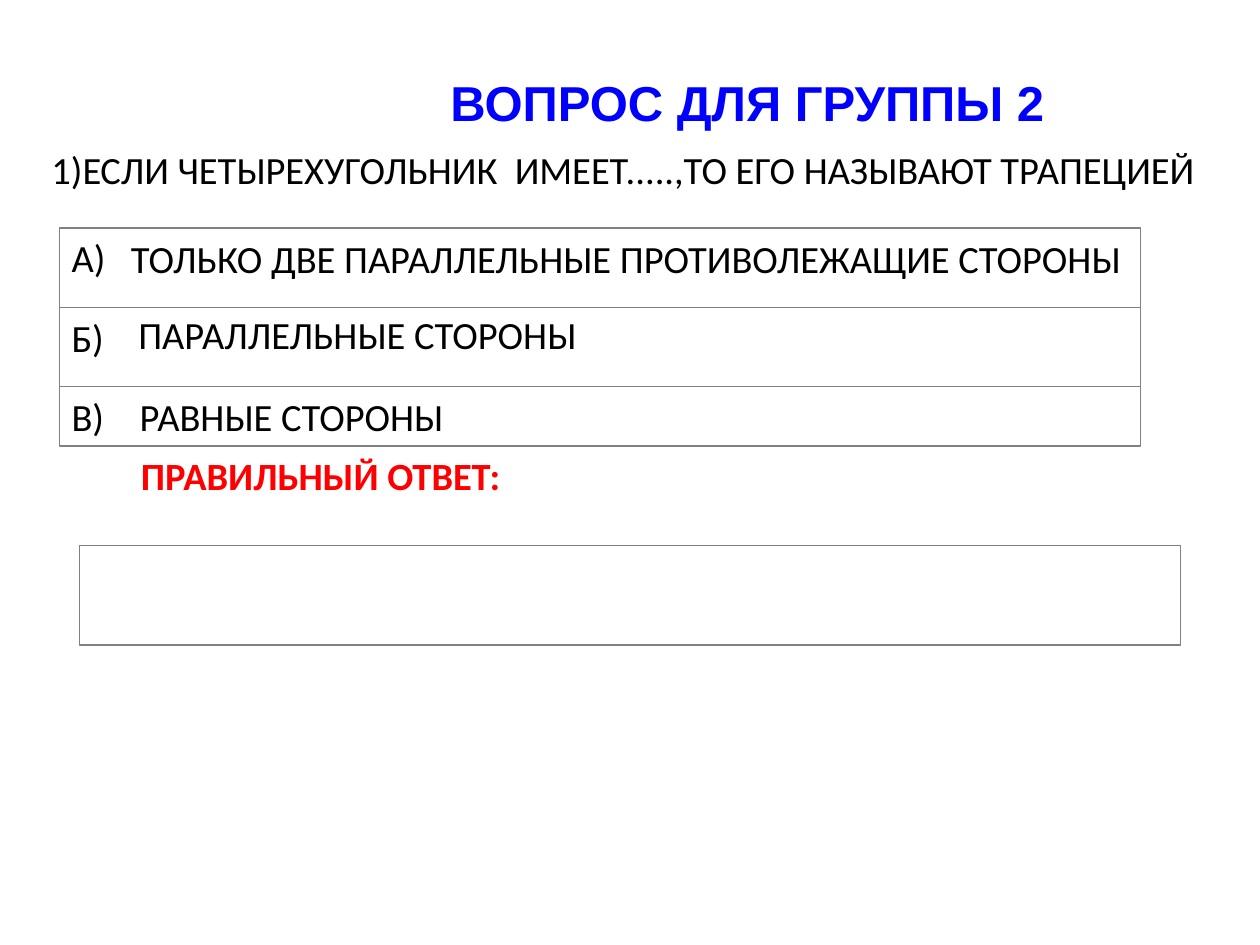
import pptx
import pptx.dml.color
import pptx.enum.shapes
import pptx.enum.text
import pptx.util
from dataclasses import dataclass

COLS, ROWS = 100, 75
LINE_H = 4.7


@dataclass(frozen=True)
class Theme:
    title_font: str = "Arial"
    body_font: str = "Calibri"
    title_size: int = 28
    body_size: int = 22
    title: str = "0000FF"
    text: str = "000000"
    accent: str = "FF0000"
    border: str = "808080"


THEME = Theme()


def rgb(value):
    return pptx.dml.color.RGBColor.from_string(value)


def place(prs, x, y, w, h):
    col, row = prs.slide_width / COLS, prs.slide_height / ROWS
    return [pptx.util.Emu(round(v)) for v in (x * col, y * row, w * col, h * row)]


def style(p, name, size, color, bold):
    p.font.name = name
    p.font.size = pptx.util.Pt(size)
    p.font.bold = bold
    p.font.color.rgb = rgb(color)


def add_title(prs, s, text, x, y, w, h):
    tf = s.shapes.add_textbox(*place(prs, x, y, w, h)).text_frame
    tf.word_wrap = True
    tf.vertical_anchor = pptx.enum.text.MSO_ANCHOR.MIDDLE
    p = tf.paragraphs[0]
    p.text = text
    p.alignment = pptx.enum.text.PP_ALIGN.CENTER
    style(p, THEME.title_font, THEME.title_size, THEME.title, True)


def add_line(prs, s, text, x, y, w, color=THEME.text, bold=False):
    tf = s.shapes.add_textbox(*place(prs, x, y, w, LINE_H)).text_frame
    tf.word_wrap = False
    tf.auto_size = pptx.enum.text.MSO_AUTO_SIZE.SHAPE_TO_FIT_TEXT
    p = tf.paragraphs[0]
    p.text = text
    style(p, THEME.body_font, THEME.body_size, color, bold)


def add_frame(prs, s, x, y, w, h):
    sp = s.shapes.add_shape(
        pptx.enum.shapes.MSO_SHAPE.RECTANGLE, *place(prs, x, y, w, h))
    sp.shadow.inherit = False
    sp.fill.background()
    sp.line.color.rgb = rgb(THEME.border)
    sp.line.width = pptx.util.Pt(0)


def add_options(prs, s, x, y, w, options):
    for label, label_w, answer, dx, dy, answer_w, h in options:
        add_frame(prs, s, x, y, w, h)
        add_line(prs, s, label, x, y, label_w)
        add_line(prs, s, answer, x + dx, y + dy, answer_w)
        y += h


def main():
    prs = pptx.Presentation()
    prs.slide_width = pptx.util.Inches(10)
    prs.slide_height = pptx.util.Inches(7.5)
    s = prs.slides.add_slide(prs.slide_layouts[6])

    add_title(prs, s, "ВОПРОС ДЛЯ ГРУППЫ 2", 23.4, 1.8, 71.8, 12.5)
    add_line(prs, s, "1)ЕСЛИ ЧЕТЫРЕХУГОЛЬНИК  ИМЕЕТ.....,ТО ЕГО НАЗЫВАЮТ ТРАПЕЦИЕЙ",
             3.1, 11.1, 94.2)
    add_options(prs, s, 4.7, 18.1, 85.8, [
        ("А)", 4.7, "ТОЛЬКО ДВЕ ПАРАЛЛЕЛЬНЫЕ ПРОТИВОЛЕЖАЩИЕ СТОРОНЫ",
         4.7, 0.1, 81.2, 6.3),
        ("Б)", 5.3, "ПАРАЛЛЕЛЬНЫЕ СТОРОНЫ", 5.3, -0.2, 37, 6.3),
        ("В)", 5.3, "РАВНЫЕ СТОРОНЫ", 5.4, 0, 26.3, LINE_H),
    ])
    add_line(prs, s, "ПРАВИЛЬНЫЙ ОТВЕТ:", 10.2, 35.4, 66.9, THEME.accent, True)
    add_frame(prs, s, 6.3, 43.3, 87.4, 7.9)

    prs.save("out.pptx")


if __name__ == "__main__":
    main()
